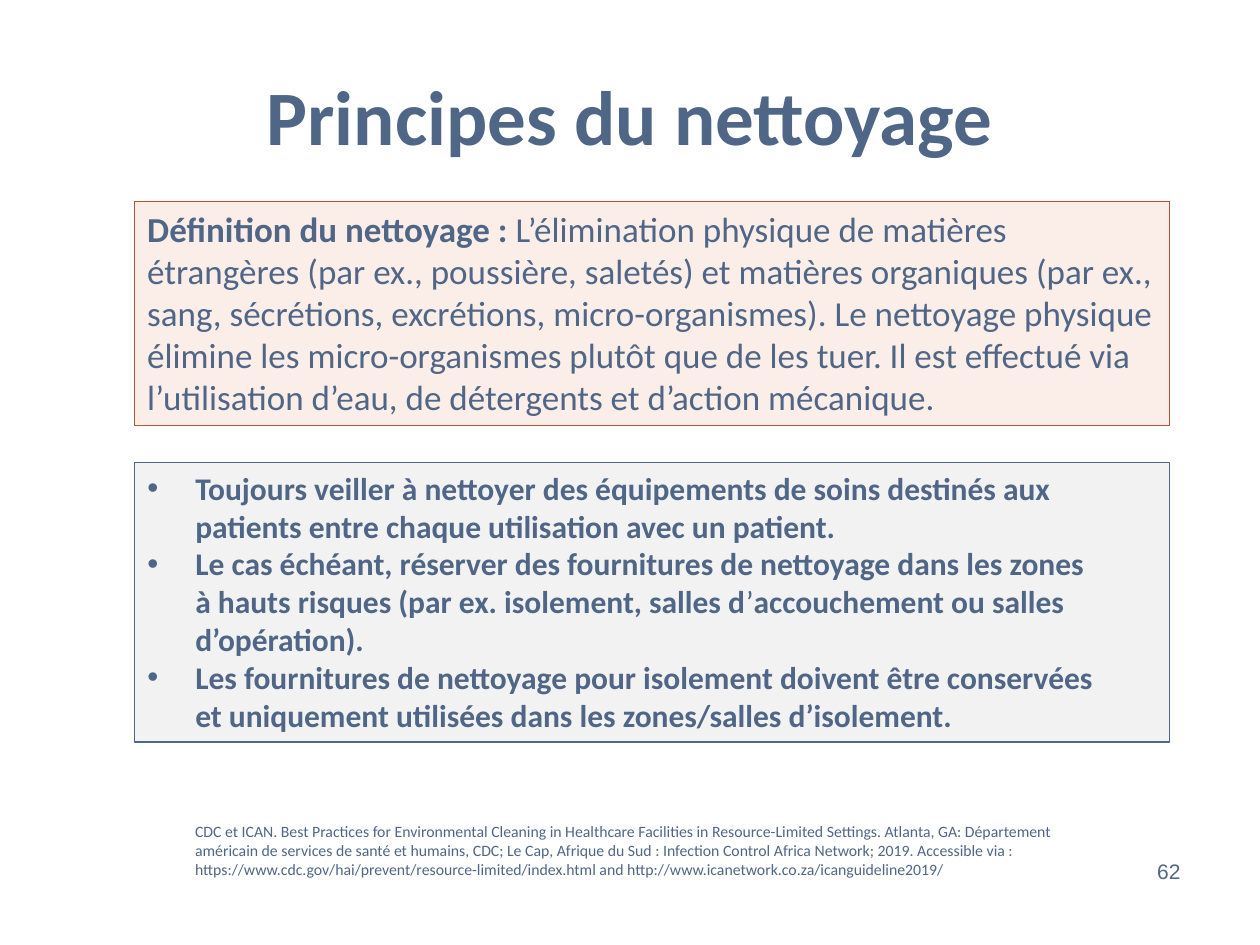
from lxml.etree import SubElement
from pptx import Presentation
from pptx.dml.color import RGBColor
from pptx.enum.shapes import MSO_SHAPE
from pptx.enum.text import MSO_ANCHOR as Anchor, MSO_AUTO_SIZE as AutoSize, PP_ALIGN as Align
from pptx.oxml.ns import qn
from pptx.util import Inches, Pt

SLATE = RGBColor(0x50, 0x66, 0x87)
RUST = RGBColor(0xB8, 0x52, 0x31)
PEACH = RGBColor(0xFB, 0xED, 0xE7)
PALE_GREY = RGBColor(0xF2, 0xF2, 0xF2)

PANEL_LEFT, PANEL_WIDTH = 1.07, 8.21

TITLE = "Principes du nettoyage"
DEFINITION = [
    ("Définition du nettoyage : ", True),
    ("L’élimination physique de matières étrangères (par ex., poussière, saletés) "
     "et matières organiques (par ex., sang, sécrétions, excrétions, micro-organismes). "
     "Le nettoyage physique élimine les micro-organismes plutôt que de les tuer. "
     "Il est effectué via l’utilisation d’eau, de détergents et d’action mécanique.", False),
]
PRINCIPLES = [
    [("Toujours veiller à nettoyer des équipements de soins destinés aux patients "
      "entre chaque utilisation avec un patient.", True)],
    [("Le cas échéant, réserver des fournitures de nettoyage dans les zones \n"
      "à hauts risques (par ex. isolement, salles d", True),
     ("’", False),
     ("accouchement ou salles d’opération).", True)],
    [("Les fournitures de nettoyage pour isolement doivent être conservées \n"
      "et uniquement utilisées dans les zones/salles d’isolement.", True)],
]
SOURCE = (
    "CDC et ICAN. Best Practices for Environmental Cleaning in Healthcare Facilities in "
    "Resource-Limited Settings. Atlanta, GA: Département américain de services de santé et "
    "humains, CDC; Le Cap, Afrique du Sud : Infection Control Africa Network; 2019. "
    "Accessible via : https://www.cdc.gov/hai/prevent/resource-limited/index.html and "
    "http://www.icanetwork.co.za/icanguideline2019/"
)
PAGE_NUMBER = "62"


def place(shape, left, top, width, height):
    shape.left, shape.top = Inches(left), Inches(top)
    shape.width, shape.height = Inches(width), Inches(height)


def add_bullet(paragraph, indent=0.38):
    properties = paragraph._p.get_or_add_pPr()
    properties.set("marL", str(Inches(indent)))
    properties.set("indent", str(-Inches(indent)))
    color = SubElement(properties, qn("a:buClr"))
    SubElement(color, qn("a:srgbClr"), val=str(SLATE))
    SubElement(properties, qn("a:buFont"), typeface="Arial")
    SubElement(properties, qn("a:buChar"), char="•")


def write(shape, paragraphs, size, font="Calibri", align=Align.LEFT,
          anchor=Anchor.TOP, margins=(0.1, 0.05), bulleted=False):
    """Fill a shape with paragraphs, each a list of (text, bold) runs."""
    frame = shape.text_frame
    frame.word_wrap = True
    frame.auto_size = AutoSize.NONE
    frame.vertical_anchor = anchor
    frame.margin_left = frame.margin_right = Inches(margins[0])
    frame.margin_top = frame.margin_bottom = Inches(margins[1])
    for index, runs in enumerate(paragraphs):
        paragraph = frame.add_paragraph() if index else frame.paragraphs[0]
        paragraph.alignment = align
        paragraph.space_before = Pt(0)
        if bulleted:
            add_bullet(paragraph)
        for text, bold in runs:
            for line_index, line in enumerate(text.split("\n")):
                if line_index:
                    paragraph.add_line_break()
                run = paragraph.add_run()
                run.text = line
                run.font.name = font
                run.font.size = Pt(size)
                run.font.bold = bold
                run.font.color.rgb = SLATE


def paint_panel(shape, fill, line):
    shape.fill.solid()
    shape.fill.fore_color.rgb = fill
    shape.line.color.rgb = line
    shape.line.width = Pt(0.75)


def add_title(slide):
    title = slide.shapes.title
    place(title, 1.06, 0.5, 7.88, 1.22)
    write(title, [[(TITLE, True)]], 44, align=Align.CENTER, margins=(0.07, 0.04))


def add_definition(slide):
    panel = slide.shapes.add_shape(
        MSO_SHAPE.RECTANGLE, Inches(PANEL_LEFT), Inches(1.6), Inches(PANEL_WIDTH), Inches(1.78))
    panel.shadow.inherit = False
    paint_panel(panel, PEACH, RUST)
    write(panel, [DEFINITION], 20)


def add_principles(slide):
    body = slide.placeholders[1]
    place(body, PANEL_LEFT, 3.67, PANEL_WIDTH, 2.22)
    paint_panel(body, PALE_GREY, SLATE)
    write(body, PRINCIPLES, 18, bulleted=True)


def add_note(slide, text, left, top, width, height, size, **text_format):
    box = slide.shapes.add_textbox(Inches(left), Inches(top), Inches(width), Inches(height))
    write(box, [[(text, False)]], size, **text_format)


def main():
    deck = Presentation()
    deck.slide_width, deck.slide_height = Inches(10), Inches(7.5)
    slide = deck.slides.add_slide(deck.slide_layouts[1])
    add_title(slide)
    add_definition(slide)
    add_principles(slide)
    add_note(slide, SOURCE, 1.45, 6.47, 7.08, 0.56, 9)
    add_note(slide, PAGE_NUMBER, 8.13, 6.75, 1.31, 0.33, 12, font="Arial",
             align=Align.RIGHT, anchor=Anchor.MIDDLE, margins=(0.07, 0.04))
    deck.save("out.pptx")


if __name__ == "__main__":
    main()
